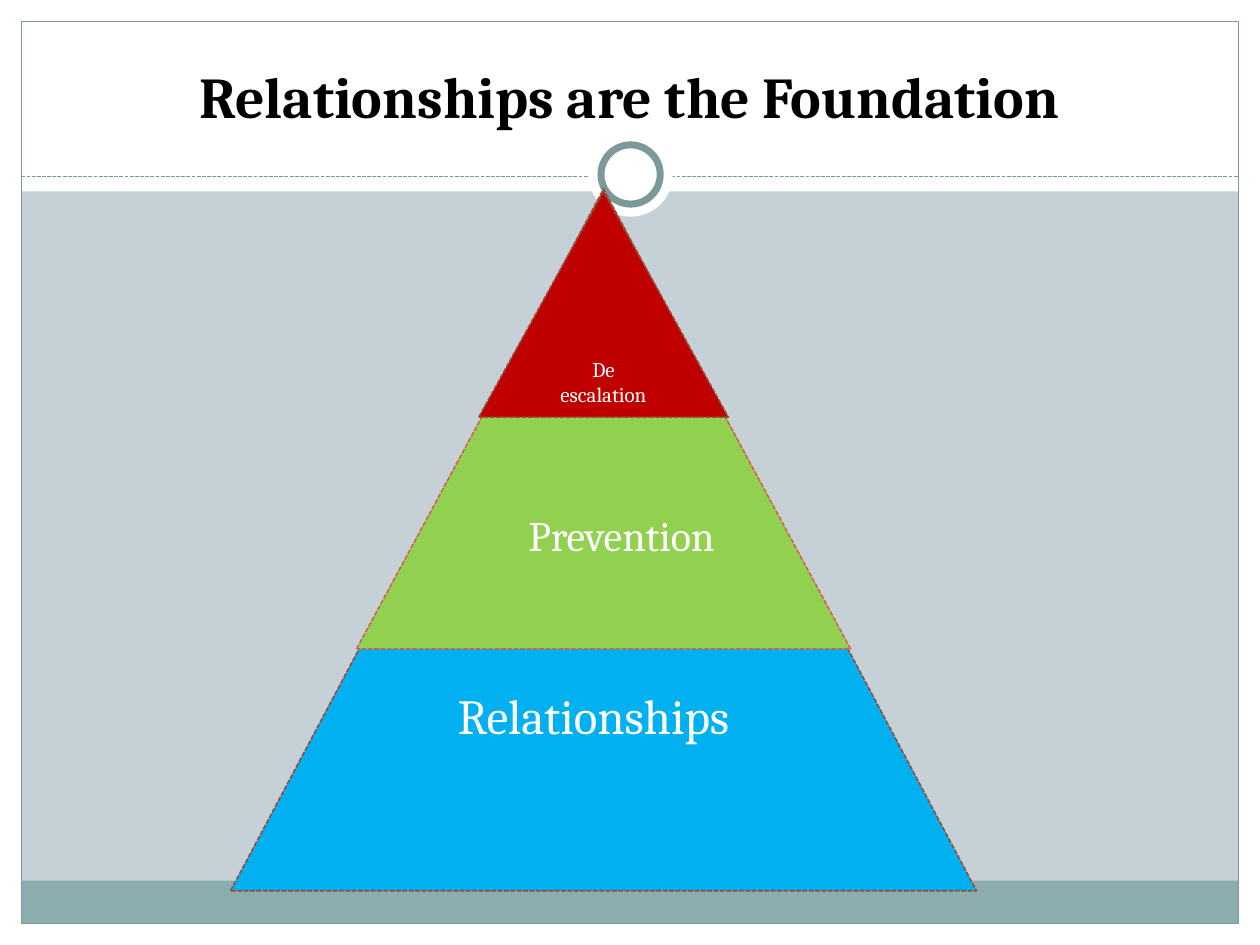
from lxml import etree
from pptx import Presentation
from pptx.dml.color import RGBColor
from pptx.enum.dml import MSO_LINE
from pptx.enum.shapes import MSO_CONNECTOR, MSO_SHAPE
from pptx.enum.text import MSO_ANCHOR, PP_ALIGN
from pptx.oxml.ns import qn
from pptx.util import Pt

SCALE = 9144
FONT = "Cambria"

RECTANGLE = MSO_SHAPE.RECTANGLE
OVAL = MSO_SHAPE.OVAL
EXTRACT = MSO_SHAPE.FLOWCHART_EXTRACT
TRIANGLE = MSO_SHAPE.ISOSCELES_TRIANGLE
STRAIGHT = MSO_CONNECTOR.STRAIGHT
DASH = MSO_LINE.SQUARE_DOT
MIDDLE = MSO_ANCHOR.MIDDLE
BOTTOM = MSO_ANCHOR.BOTTOM
CENTER = PP_ALIGN.CENTER
RIGHT = PP_ALIGN.RIGHT

BLACK = RGBColor(0x00, 0x00, 0x00)
WHITE = RGBColor(0xFF, 0xFF, 0xFF)
MIST = RGBColor(0xC5, 0xD1, 0xD7)
TEAL = RGBColor(0x8C, 0xAD, 0xAE)
SLATE = RGBColor(0x7C, 0x99, 0x9A)
BLUE = RGBColor(0x00, 0xB0, 0xF0)
GREEN = RGBColor(0x92, 0xD0, 0x50)
RED = RGBColor(0xC0, 0x00, 0x00)
RUST = RGBColor(0x9B, 0x49, 0x36)
CORAL = RGBColor(0xD1, 0x63, 0x49)


def px(value):
    return value * SCALE


def set_line(line, color, width, dashed=False):
    line.color.rgb = color
    line.width = Pt(width)
    if dashed:
        line.dash_style = DASH


def add_shape(slide, kind, box, fill=None):
    shape = slide.shapes.add_shape(kind, *map(px, box))
    shape.shadow.inherit = False
    shape.line.fill.background()
    if fill is None:
        shape.fill.background()
    else:
        shape.fill.solid()
        shape.fill.fore_color.rgb = fill
    return shape


def write_text(paragraph, text, size, color, alignment, bold=False):
    paragraph.alignment = alignment
    run = paragraph.add_run()
    run.text = text
    run.font.name = FONT
    run.font.size = Pt(size)
    run.font.color.rgb = color
    run.font.bold = bold


def add_frame(slide, box):
    left, top, width, height = box
    margin, header, footer = 17, 152, 34
    right, bottom = left + width - margin, top + height - margin
    inner_width = width - 2 * margin
    panels = [
        ((left, bottom, width, margin), WHITE),
        ((left, top, width, header), WHITE),
        ((left, top, margin, height), WHITE),
        ((right, top, margin, height), WHITE),
        ((left + margin, bottom - footer, inner_width, footer), TEAL),
    ]
    for panel, color in panels:
        add_shape(slide, RECTANGLE, panel, color)
    border = add_shape(
        slide, RECTANGLE,
        (left + margin, top + margin, inner_width, height - 2 * margin))
    set_line(border.line, SLATE, 0.75)

    rule_y = top + 140
    rule = slide.shapes.add_connector(
        STRAIGHT, px(left + margin), px(rule_y), px(right), px(rule_y))
    set_line(rule.line, SLATE, 0.75, dashed=True)
    etree.SubElement(rule._element.spPr, qn("a:effectLst"))


def add_ring(slide, box):
    left, top, size = box
    inset = 10
    add_shape(slide, OVAL, (left, top, size, size), WHITE)
    inner = size - 2 * inset
    ring = add_shape(
        slide, OVAL, (left + inset, top + inset, inner, inner), WHITE)
    set_line(ring.line, SLATE, 4)


def place_title(slide, box, text):
    title = slide.shapes.title
    title.left, title.top, title.width, title.height = map(px, box)
    title.text_frame.word_wrap = True
    title.text_frame.vertical_anchor = BOTTOM
    write_text(title.text_frame.paragraphs[0], text, 33, BLACK, CENTER, True)
    title._element.getparent().append(title._element)


def add_pyramid(slide, box):
    left, top, width, height = box
    tiers = [
        (EXTRACT, (0, 0, width, height), BLUE, RUST,
         "Relationships", 28, CENTER, 26, 5),
        (TRIANGLE, (100, 2, 392, 363), GREEN, CORAL,
         "Prevention", 24, RIGHT, 10, 5),
        (EXTRACT, (197, 2, 198, 179), RED, RUST,
         "De escalation", 12, CENTER, 10, 38),
    ]
    for kind, (x, y, w, h), fill, edge, text, size, align, right, above in tiers:
        tier = add_shape(slide, kind, (left + x, top + y, w, h), fill)
        set_line(tier.line, edge, 0.9, dashed=True)
        frame = tier.text_frame
        frame.word_wrap = True
        frame.vertical_anchor = MIDDLE
        frame.margin_right = px(right)
        frame.margin_top = px(above)
        write_text(frame.paragraphs[0], text, size, WHITE, align)


def main():
    presentation = Presentation()
    presentation.slide_width = px(1000)
    presentation.slide_height = px(750)
    slide = presentation.slides.add_slide(presentation.slide_layouts[5])
    slide.background.fill.solid()
    slide.background.fill.fore_color.rgb = MIST

    add_frame(slide, (0, 0, 1000, 750))
    add_ring(slide, (467, 105, 67))
    place_title(slide, (33, 25, 933, 83), "Relationships are the Foundation")
    add_pyramid(slide, (183, 150, 592, 557))
    presentation.save("out.pptx")


if __name__ == "__main__":
    main()
